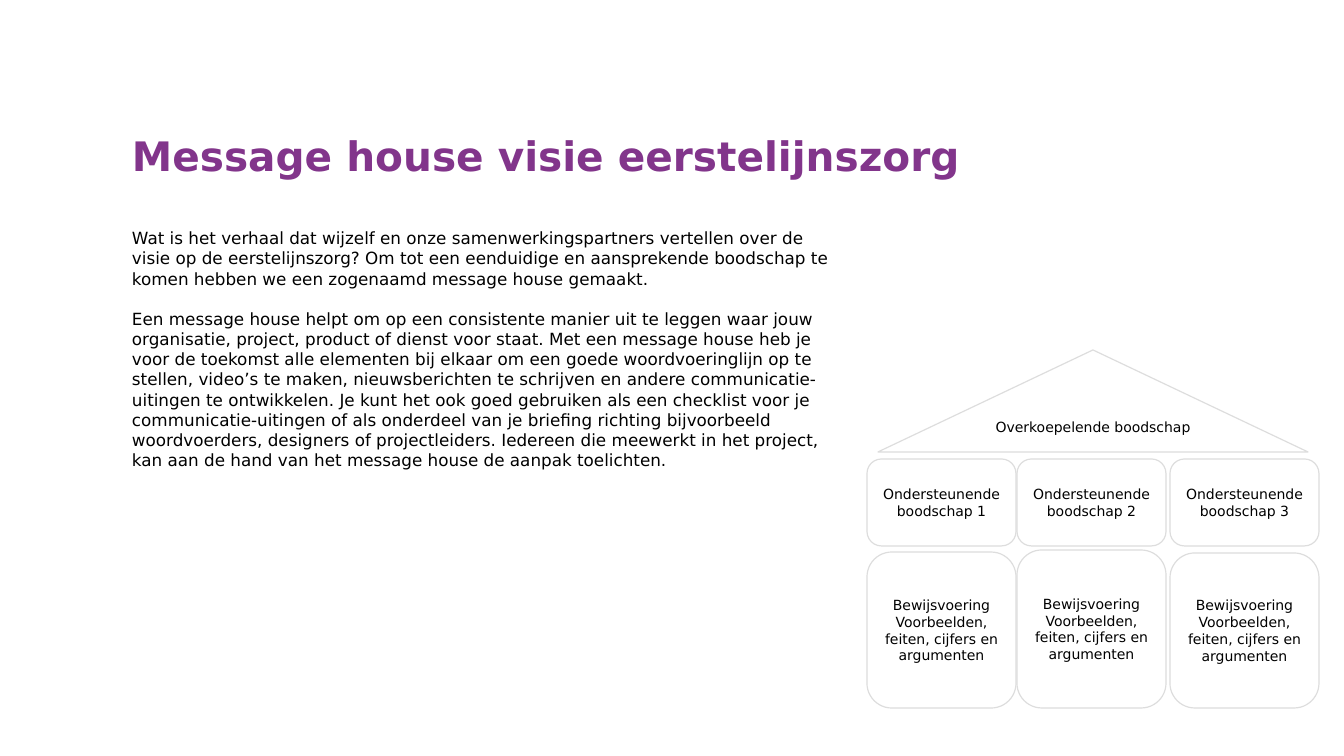
from pptx import Presentation, util as u
from pptx.dml.color import RGBColor
from pptx.enum import shapes, text

TITLE = "Message house visie eerstelijnszorg"
STORY = [
    "Wat is het verhaal dat wijzelf en onze samenwerkingspartners vertellen over de "
    "visie op de eerstelijnszorg? Om tot een eenduidige en aansprekende boodschap te "
    "komen hebben we een zogenaamd message house gemaakt.",
    "Een message house helpt om op een consistente manier uit te leggen waar jouw "
    "organisatie, project, product of dienst voor staat. Met een message house heb je "
    "voor de toekomst alle elementen bij elkaar om een goede woordvoeringlijn op te "
    "stellen, video’s te maken, nieuwsberichten te schrijven en andere "
    "communicatie-uitingen te ontwikkelen. Je kunt het ook goed gebruiken als een "
    "checklist voor je communicatie-uitingen of als onderdeel van je briefing richting "
    "bijvoorbeeld woordvoerders, designers of projectleiders. Iedereen die meewerkt in "
    "het project, kan aan de hand van het message house de aanpak toelichten.",
]
ROOF = ["Overkoepelende boodschap"]
SUPPORT = "Ondersteunende boodschap"
PROOF = ["Bewijsvoering", "Voorbeelden, feiten, cijfers en argumenten"]
COLUMNS = [(867, 552), (1017, 550), (1170, 553)]  # left, top of proof box

COLORS = {"title": "82358B", "text": "000000", "fill": "FFFFFF", "line": "DDDDDD"}
FONT = "DejaVu Sans"
WIDE, FLOOR = 149, 708
KIND = shapes.MSO_SHAPE


def px(n):
    return u.Emu(round(n * 914400 / 100.8))


def color(name):
    return RGBColor.from_string(COLORS[name])


def write(frame, lines, size, align, tint="text", bold=False, pitch=None, gap=0):
    """Fill a frame with paragraphs; pitch and gap are points."""
    frame.word_wrap = True
    frame.text = "\n".join(lines)
    for i, para in enumerate(frame.paragraphs):
        para.alignment = align
        if pitch:
            para.line_spacing = u.Pt(pitch)
        if i and gap:
            para.space_before = u.Pt(gap)
        for run in para.runs:
            font = run.font
            font.name, font.size, font.bold = FONT, u.Pt(size), bold
            font.color.rgb = color(tint)


def trim(frame):
    frame.margin_left = frame.margin_right = 0
    frame.margin_top = frame.margin_bottom = 0
    frame.vertical_anchor = text.MSO_ANCHOR.TOP
    frame.auto_size = text.MSO_AUTO_SIZE.NONE


def block(house, kind, box, lines):
    """Add one outlined part of the house."""
    part = house.shapes.add_shape(kind, *map(px, box))
    part.shadow.inherit = False
    part.fill.solid()
    part.fill.fore_color.rgb = color("fill")
    part.line.color.rgb = color("line")
    part.line.width = u.Pt(0.85)
    part.text_frame.vertical_anchor = text.MSO_ANCHOR.MIDDLE
    write(part.text_frame, lines, 10, text.PP_ALIGN.CENTER)


def main():
    prs = Presentation()
    prs.slide_width, prs.slide_height = px(1344), px(756)
    slide = prs.slides.add_slide(prs.slide_layouts[5])

    head = slide.shapes.title
    head.left, head.top, head.width, head.height = map(px, (132, 131, 1080, 49))
    trim(head.text_frame)
    write(head.text_frame, [TITLE], 29, text.PP_ALIGN.LEFT, "title", True, 35)

    story = slide.shapes.add_textbox(*map(px, (132, 228, 700, 346)))
    trim(story.text_frame)
    write(story.text_frame, STORY, 12, text.PP_ALIGN.LEFT, pitch=14.4, gap=14.4)

    house = slide.shapes.add_group_shape()
    block(house, KIND.FLOWCHART_EXTRACT, (878, 350, 430, 102), ROOF)
    for i, (left, top) in enumerate(COLUMNS, 1):
        block(house, KIND.ROUNDED_RECTANGLE, (left, 459, WIDE, 87), [f"{SUPPORT} {i}"])
        block(house, KIND.ROUNDED_RECTANGLE, (left, top, WIDE, FLOOR - top), PROOF)

    prs.save("out.pptx")


if __name__ == "__main__":
    main()
